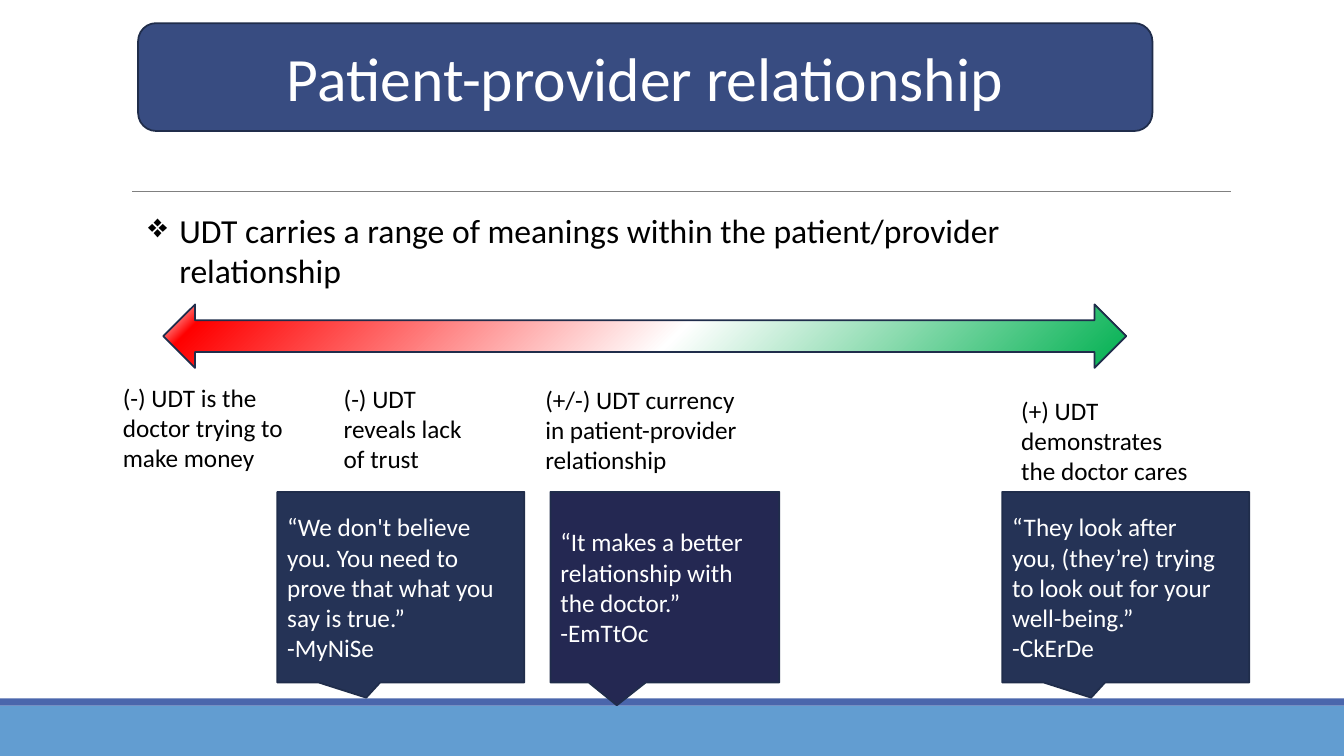
from dataclasses import dataclass

from lxml import etree
from pptx import Presentation
from pptx.dml.color import RGBColor
from pptx.enum.shapes import MSO_CONNECTOR, MSO_SHAPE
from pptx.enum.text import MSO_ANCHOR, MSO_AUTO_SIZE, PP_ALIGN
from pptx.oxml.ns import qn
from pptx.shapes.autoshape import Shape
from pptx.slide import Slide
from pptx.text.text import TextFrame
from pptx.util import Pt

RECTANGLE = MSO_SHAPE.RECTANGLE
BANNER = MSO_SHAPE.FLOWCHART_ALTERNATE_PROCESS
CALLOUT = MSO_SHAPE.RECTANGULAR_CALLOUT
DOUBLE_ARROW = MSO_SHAPE.LEFT_RIGHT_ARROW
STRAIGHT = MSO_CONNECTOR.STRAIGHT
TOP, MIDDLE = MSO_ANCHOR.TOP, MSO_ANCHOR.MIDDLE
LEFT, CENTER = PP_ALIGN.LEFT, PP_ALIGN.CENTER
GROW, FIXED = MSO_AUTO_SIZE.SHAPE_TO_FIT_TEXT, MSO_AUTO_SIZE.NONE

EMU_PER_PX = 9144  # 100 px to the inch
SLIDE_WIDTH, SLIDE_HEIGHT = 1333, 750


@dataclass(frozen=True)
class Theme:
    font: str = "Calibri"
    title_size: int = 44
    lead_size: int = 24
    body_size: int = 18
    outline_width: float = 1.25
    rule_width: float = 0.5
    dark_text: str = "000000"
    light_text: str = "FFFFFF"
    outline: str = "202D4B"
    banner: str = "384C81"
    quote: str = "253356"
    quote_neutral: str = "242852"
    rule: str = "808080"
    footer: str = "629DD1"
    footer_edge: str = "4A66AC"
    spectrum: tuple[tuple[int, str], ...] = (
        (0, "FFFFFF"), (5, "FF0000"), (53, "FFFFFF"), (100, "00B050"))


THEME = Theme()


@dataclass(frozen=True)
class Box:
    left: int
    top: int
    width: int
    height: int

    def emu(self) -> tuple[int, int, int, int]:
        return px(self.left), px(self.top), px(self.width), px(self.height)


@dataclass(frozen=True)
class Meaning:
    box: Box
    text: str


@dataclass(frozen=True)
class Quote:
    box: Box
    lines: tuple[str, ...]
    fill: str
    tip: tuple[float, float]


TITLE_BOX = Box(137, 23, 1006, 107)
LEAD_BOX = Box(137, 203, 1006, 131)
SPECTRUM_BOX = Box(162, 302, 955, 63)
RULE_LEFT, RULE_RIGHT, RULE_Y = 131, 1221, 190
QUOTE_TOP, QUOTE_HEIGHT = 488, 189
SIDE_TIP, NEUTRAL_TIP = (-0.14, 0.58), (-0.21, 0.62)

MEANINGS = (
    Meaning(Box(112, 374, 180, 131), "(-) UDT is the doctor trying to make money"),
    Meaning(Box(331, 375, 162, 131), "(-) UDT reveals lack of trust"),
    Meaning(Box(531, 376, 217, 131),
            "(+/-) UDT currency in patient-provider relationship"),
    Meaning(Box(1003, 387, 192, 101), "(+) UDT demonstrates the doctor cares"),
)
QUOTES = (
    Quote(Box(275, QUOTE_TOP, 245, QUOTE_HEIGHT),
          ("“We don't believe you. You need to prove that what you say is true.”",
           "-MyNiSe"),
          THEME.quote, SIDE_TIP),
    Quote(Box(546, QUOTE_TOP, 227, QUOTE_HEIGHT),
          ("“It makes a better relationship with the doctor.”", "-EmTtOc"),
          THEME.quote_neutral, NEUTRAL_TIP),
    Quote(Box(994, QUOTE_TOP, 245, QUOTE_HEIGHT),
          ("“They look after",
           "you, (they’re) trying to look out for your well-being.”", "-CkErDe"),
          THEME.quote, SIDE_TIP),
)


def px(length: int) -> int:
    return length * EMU_PER_PX


def rgb(color: str) -> RGBColor:
    return RGBColor.from_string(color)


def write(frame: TextFrame, lines: tuple[str, ...], size: int, color: str,
          align: PP_ALIGN = LEFT, anchor: MSO_ANCHOR = TOP,
          fit: MSO_AUTO_SIZE = FIXED) -> None:
    """Fill a text frame with one paragraph per line."""
    frame.word_wrap = True
    frame.auto_size = fit
    frame.vertical_anchor = anchor
    frame.text = "\n".join(lines)
    for paragraph in frame.paragraphs:
        paragraph.alignment = align
        paragraph.font.name = THEME.font
        paragraph.font.size = Pt(size)
        paragraph.font.color.rgb = rgb(color)


def add_filled(slide: Slide, kind: MSO_SHAPE, box: Box, fill: str,
               outlined: bool = True) -> Shape:
    shape = slide.shapes.add_shape(kind, *box.emu())
    shape.shadow.inherit = False
    shape.fill.solid()
    shape.fill.fore_color.rgb = rgb(fill)
    if outlined:
        shape.line.color.rgb = rgb(THEME.outline)
        shape.line.width = Pt(THEME.outline_width)
    else:
        shape.line.fill.background()
    return shape


def add_text(slide: Slide, box: Box, text: str, size: int) -> TextFrame:
    frame = slide.shapes.add_textbox(*box.emu()).text_frame
    write(frame, (text,), size, THEME.dark_text, fit=GROW)
    return frame


def add_backdrop(slide: Slide) -> None:
    """Draw the footer bands and the rule under the title."""
    add_filled(slide, RECTANGLE, Box(0, 700, SLIDE_WIDTH, 50), THEME.footer, False)
    add_filled(slide, RECTANGLE, Box(0, 693, SLIDE_WIDTH, 7), THEME.footer_edge, False)
    rule = slide.shapes.add_connector(
        STRAIGHT, px(RULE_LEFT), px(RULE_Y), px(RULE_RIGHT), px(RULE_Y))
    rule.line.color.rgb = rgb(THEME.rule)
    rule.line.width = Pt(THEME.rule_width)
    etree.SubElement(rule._element.spPr, qn("a:effectLst"))


def add_title(slide: Slide) -> None:
    banner = add_filled(slide, BANNER, TITLE_BOX, THEME.banner)
    title = slide.shapes.title
    title.left, title.top, title.width, title.height = TITLE_BOX.emu()
    write(title.text_frame, ("Patient-provider relationship",), THEME.title_size,
          THEME.light_text, CENTER, MIDDLE)
    banner._element.addnext(title._element)


def add_lead(slide: Slide) -> None:
    frame = add_text(
        slide, LEAD_BOX,
        "UDT carries a range of meanings within the patient/provider relationship",
        THEME.lead_size)
    properties = frame.paragraphs[0]._p.get_or_add_pPr()
    properties.set("marL", str(px(31)))
    properties.set("indent", str(px(-31)))
    bullet = etree.Element(qn("a:buChar"), char="❖")
    properties.insert(0, bullet)


def add_spectrum(slide: Slide) -> None:
    """Draw the double arrow that runs from negative to positive."""
    arrow = add_filled(slide, DOUBLE_ARROW, SPECTRUM_BOX, THEME.light_text)
    arrow.fill.gradient()
    arrow.fill.gradient_angle = 315
    stops = arrow._element.spPr.find(qn("a:gradFill")).find(qn("a:gsLst"))
    for stop in list(stops):
        stops.remove(stop)
    for percent, color in THEME.spectrum:
        stop = etree.SubElement(stops, qn("a:gs"), pos=str(percent * 1000))
        etree.SubElement(stop, qn("a:srgbClr"), val=color)


def add_quote(slide: Slide, quote: Quote) -> None:
    callout = add_filled(slide, CALLOUT, quote.box, quote.fill)
    callout.adjustments[0], callout.adjustments[1] = quote.tip
    write(callout.text_frame, quote.lines, THEME.body_size, THEME.light_text,
          anchor=MIDDLE)


def main() -> None:
    deck = Presentation()
    deck.slide_width, deck.slide_height = px(SLIDE_WIDTH), px(SLIDE_HEIGHT)
    slide = deck.slides.add_slide(deck.slide_layouts.get_by_name("Title Only"))
    add_backdrop(slide)
    add_title(slide)
    add_lead(slide)
    add_spectrum(slide)
    for meaning in MEANINGS:
        add_text(slide, meaning.box, meaning.text, THEME.body_size)
    for quote in QUOTES:
        add_quote(slide, quote)
    deck.save("out.pptx")


if __name__ == "__main__":
    main()
